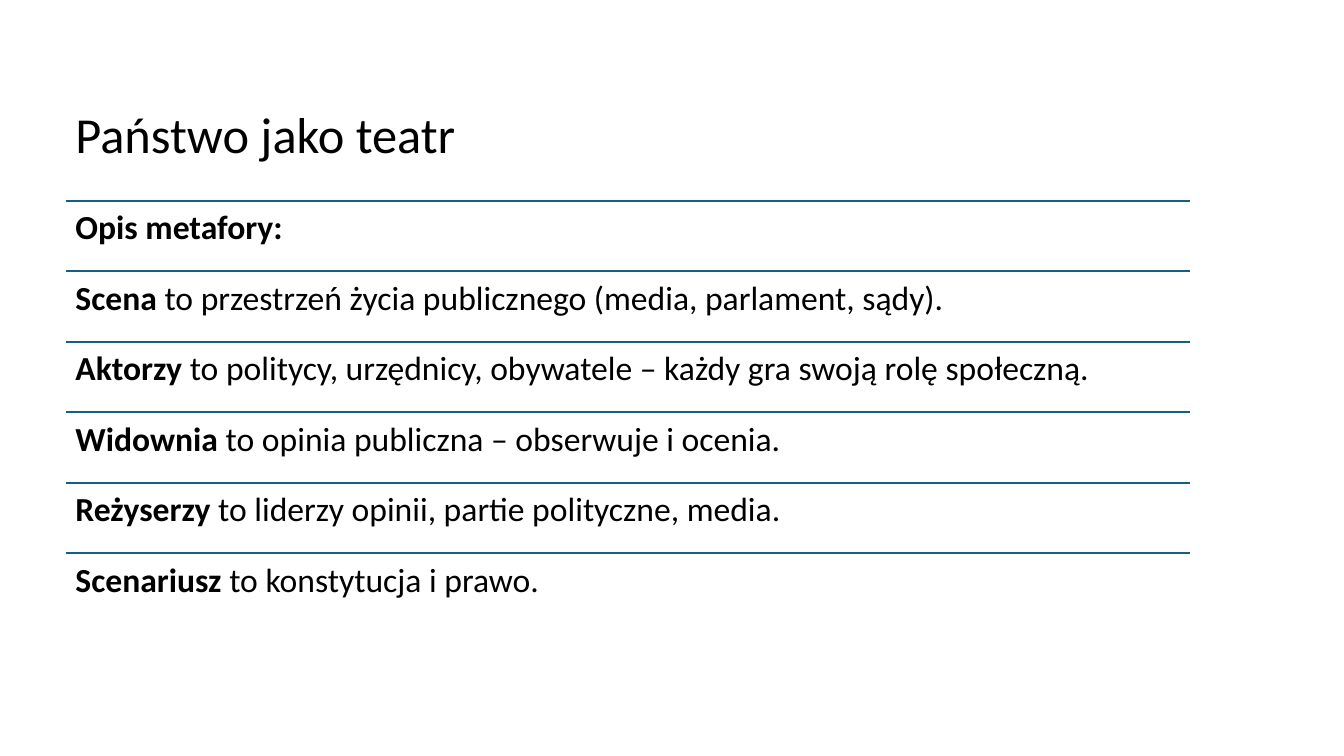
"""Build the slide presenting the state as a theatre."""
from lxml import etree
from pptx import Presentation
from pptx.dml.color import RGBColor
from pptx.enum.shapes import MSO_CONNECTOR
from pptx.enum.text import MSO_ANCHOR, MSO_AUTO_SIZE
from pptx.oxml.ns import qn
from pptx.util import Inches, Pt

TITLE = "Państwo jako teatr"
ROWS = [
    ("Opis metafory:", ""),
    ("Scena", " to przestrzeń życia publicznego (media, parlament, sądy)."),
    ("Aktorzy", " to politycy, urzędnicy, obywatele – każdy gra swoją rolę społeczną."),
    ("Widownia", " to opinia publiczna – obserwuje i ocenia."),
    ("Reżyserzy", " to liderzy opinii, partie polityczne, media."),
    ("Scenariusz", " to konstytucja i prawo."),
]

FONT = "Calibri"
BLACK = RGBColor(0x00, 0x00, 0x00)
TEAL = RGBColor(0x15, 0x60, 0x82)
STRAIGHT = MSO_CONNECTOR.STRAIGHT
TOP = MSO_ANCHOR.TOP
GROW = MSO_AUTO_SIZE.SHAPE_TO_FIT_TEXT

LEFT, WIDTH = 0.65, 11.15
ROWS_TOP, ROW_HEIGHT = 1.99, 0.7
INSET = 0.1


def add_box(s, left, top, width, height):
    tf = s.shapes.add_textbox(
        Inches(left), Inches(top), Inches(width), Inches(height)
    ).text_frame
    tf.word_wrap = True
    tf.vertical_anchor = TOP
    return tf


def add_run(p, text, size, bold=False):
    r = p.add_run()
    r.text = text
    r.font.name = FONT
    r.font.size = Pt(size)
    r.font.bold = bold
    r.font.color.rgb = BLACK


def add_rule(s, top):
    line = s.shapes.add_connector(
        STRAIGHT, Inches(LEFT), Inches(top), Inches(LEFT + WIDTH), Inches(top)
    )
    line.line.color.rgb = TEAL
    line.line.width = Pt(1.5)
    etree.SubElement(line._element.spPr, qn("a:effectLst"))


def add_row(s, top, term, meaning):
    add_rule(s, top)
    tf = add_box(s, LEFT, top, WIDTH, ROW_HEIGHT)
    tf.margin_left = tf.margin_right = Inches(INSET)
    tf.margin_top = tf.margin_bottom = Inches(INSET)
    p = tf.paragraphs[0]
    p.line_spacing = 0.9
    add_run(p, term, 24, bold=True)
    if meaning:
        add_run(p, meaning, 24)


def main():
    prs = Presentation()
    prs.slide_width, prs.slide_height = Inches(13.33), Inches(7.5)
    s = prs.slides.add_slide(prs.slide_layouts[6])

    tf = add_box(s, LEFT, 0.97, 6.94, 0.71)
    tf.auto_size = GROW
    add_run(tf.paragraphs[0], TITLE, 36)

    for i, (term, meaning) in enumerate(ROWS):
        add_row(s, ROWS_TOP + i * ROW_HEIGHT, term, meaning)

    prs.save("out.pptx")


if __name__ == "__main__":
    main()
